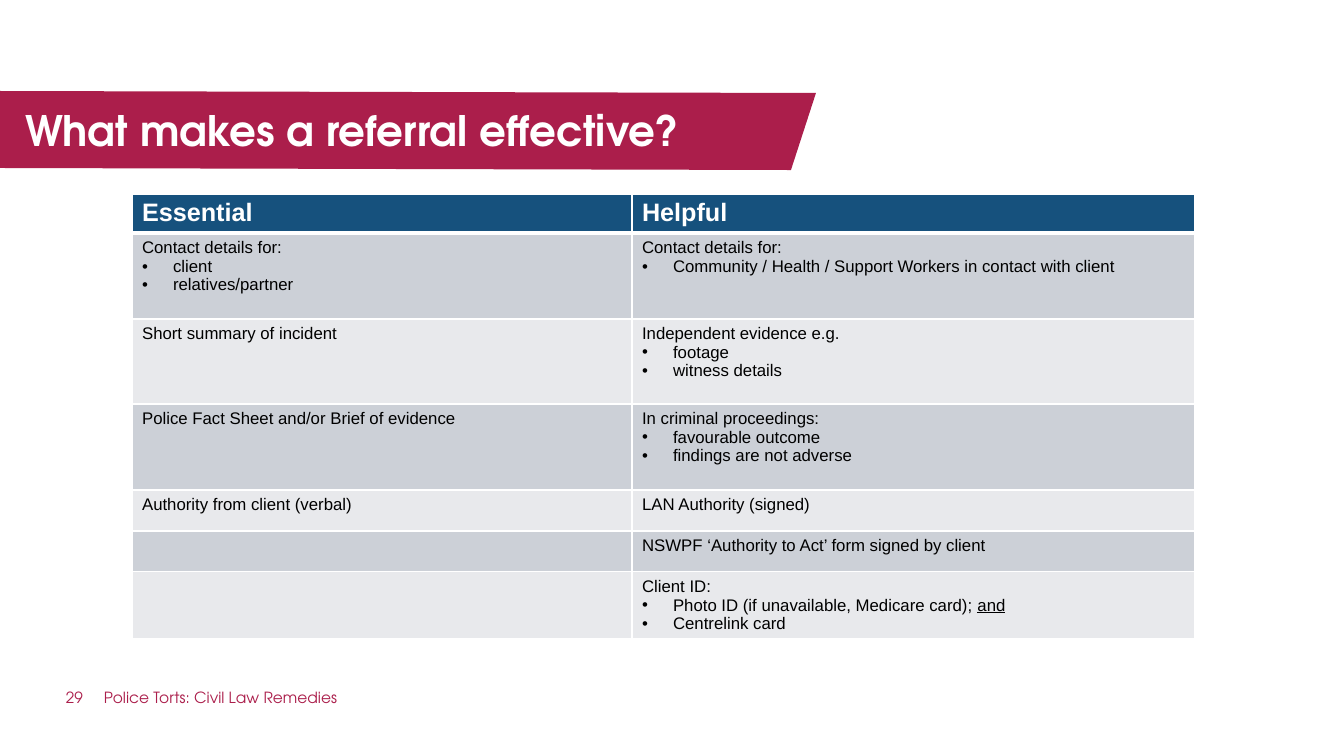
from lxml.etree import SubElement
from pptx import Presentation
from pptx.dml.color import RGBColor
from pptx.enum.text import MSO_ANCHOR as Anchor, MSO_AUTO_SIZE as AutoSize, PP_ALIGN as Align
from pptx.oxml.ns import qn
from pptx.util import Emu, Pt

PX = 914400 / 100.8
WHITE = RGBColor(0xFF, 0xFF, 0xFF)
BLACK = RGBColor(0x00, 0x00, 0x00)
CRIMSON = RGBColor(0xAB, 0x1E, 0x4B)
NAVY = RGBColor(0x16, 0x51, 0x7D)
GREY = RGBColor(0xCC, 0xD0, 0xD7)
PALE = RGBColor(0xE8, 0xE9, 0xEC)
HEADING_FONT = "TeX Gyre Adventor"
TABLE_FONT = "Arial"

# Each cell: a lead line, then bullets; a tuple is a bullet with an underlined end
HEADERS = [["Essential"], ["Helpful"]]
ROWS = [
    (["Contact details for:", "client", "relatives/partner"],
     ["Contact details for:", "Community / Health / Support Workers in contact with client"]),
    (["Short summary of incident"],
     ["Independent evidence e.g.", "footage", "witness details"]),
    (["Police Fact Sheet and/or Brief of evidence"],
     ["In criminal proceedings:", "favourable outcome", "findings are not adverse"]),
    (["Authority from client (verbal)"], ["LAN Authority (signed)"]),
    ([""], ["NSWPF ‘Authority to Act’ form signed by client"]),
    ([""], ["Client ID:", ("Photo ID (if unavailable, Medicare card); ", "and"),
            "Centrelink card"]),
]
COLUMN_WIDTHS = [500, 563]
ROW_HEIGHTS = [39, 86, 85, 86, 41, 41, 66]


def px(value):
    return Emu(round(value * PX))


class SlideBuilder:
    """Holds the presentation, its current slide and the shared style."""

    def __init__(self, width, height):
        self.presentation = Presentation()
        self.presentation.slide_width = px(width)
        self.presentation.slide_height = px(height)
        self.slide = self.presentation.slides.add_slide(self.presentation.slide_layouts[5])

    def style(self, paragraph, size, color, name, bold=False):
        paragraph.alignment = Align.LEFT
        font = paragraph.font
        font.size, font.name, font.bold = Pt(size), name, bold
        font.color.rgb = color

    def fill_frame(self, frame, text, size, color, bold=False):
        frame.margin_left = frame.margin_right = frame.margin_top = frame.margin_bottom = 0
        frame.word_wrap = True
        frame.auto_size = AutoSize.NONE
        frame.vertical_anchor = Anchor.TOP
        frame.text = text
        self.style(frame.paragraphs[0], size, color, HEADING_FONT, bold)

    def title(self, text, left, top, width, height):
        title = self.slide.shapes.title
        title.left, title.top, title.width, title.height = map(px, (left, top, width, height))
        self.fill_frame(title.text_frame, text, 30, WHITE, bold=True)

    def text(self, text, left, top, width, height):
        box = self.slide.shapes.add_textbox(*map(px, (left, top, width, height)))
        self.fill_frame(box.text_frame, text, 11, CRIMSON)

    def banner(self, points):
        builder = self.slide.shapes.build_freeform(*points[0], scale=PX)
        builder.add_line_segments(points[1:], close=True)
        shape = builder.convert_to_shape()
        shape.shadow.inherit = False
        shape.fill.solid()
        shape.fill.fore_color.rgb = CRIMSON
        shape.line.fill.background()
        # The banner lies behind the title
        self.slide.shapes.title.element.addprevious(shape.element)

    def bullet(self, paragraph):
        properties = paragraph._p.get_or_add_pPr()
        properties.set("marL", str(px(31)))
        properties.set("indent", str(-px(31)))
        SubElement(properties, qn("a:buFont"), typeface=TABLE_FONT)
        SubElement(properties, qn("a:buChar"), char="•")

    def borders(self, cell, top, bottom):
        properties = cell._tc.get_or_add_tcPr()
        for side, points in (("L", 1), ("R", 1), ("T", top), ("B", bottom)):
            line = SubElement(properties, qn(f"a:ln{side}"), w=str(Pt(points)))
            solid = SubElement(line, qn("a:solidFill"))
            SubElement(solid, qn("a:srgbClr"), val=str(WHITE))

    def cell(self, cell, lines, size, color, fill, bold):
        frame = cell.text_frame
        for index, line in enumerate(lines):
            paragraph = frame.add_paragraph() if index else frame.paragraphs[0]
            if index:
                self.bullet(paragraph)
            self.style(paragraph, size, color, TABLE_FONT, bold)
            plain, underlined = line if isinstance(line, tuple) else (line, "")
            if plain:
                paragraph.add_run().text = plain
            if underlined:
                run = paragraph.add_run()
                run.text = underlined
                run.font.underline = True
        cell.fill.solid()
        cell.fill.fore_color.rgb = fill

    def table(self, left, top, rows):
        size = sum(COLUMN_WIDTHS), sum(ROW_HEIGHTS)
        table = self.slide.shapes.add_table(
            len(rows), len(COLUMN_WIDTHS), *map(px, (left, top, *size))).table
        for column, width in zip(table.columns, COLUMN_WIDTHS):
            column.width = px(width)
        for r, (row, height) in enumerate(zip(rows, ROW_HEIGHTS)):
            table.rows[r].height = px(height)
            header = r == 0
            look = (18, WHITE, NAVY, True) if header else (12, BLACK, GREY if r % 2 else PALE, False)
            for c, lines in enumerate(row):
                cell = table.cell(r, c)
                self.borders(cell, top=3 if r == 1 else 1, bottom=3 if header else 1)
                self.cell(cell, lines, *look)


def main():
    builder = SlideBuilder(1344, 756)

    # Title on its banner
    builder.banner([(0, 91), (816, 93), (791, 170), (0, 168)])
    builder.title("What makes a referral effective?", 25, 105, 761, 49)

    # Referral table
    builder.table(132, 194, [HEADERS, *ROWS])

    # Footer
    builder.text("29", 66, 688, 37, 35)
    builder.text("Police Torts: Civil Law Remedies", 104, 688, 619, 35)

    builder.presentation.save("out.pptx")


if __name__ == "__main__":
    main()
